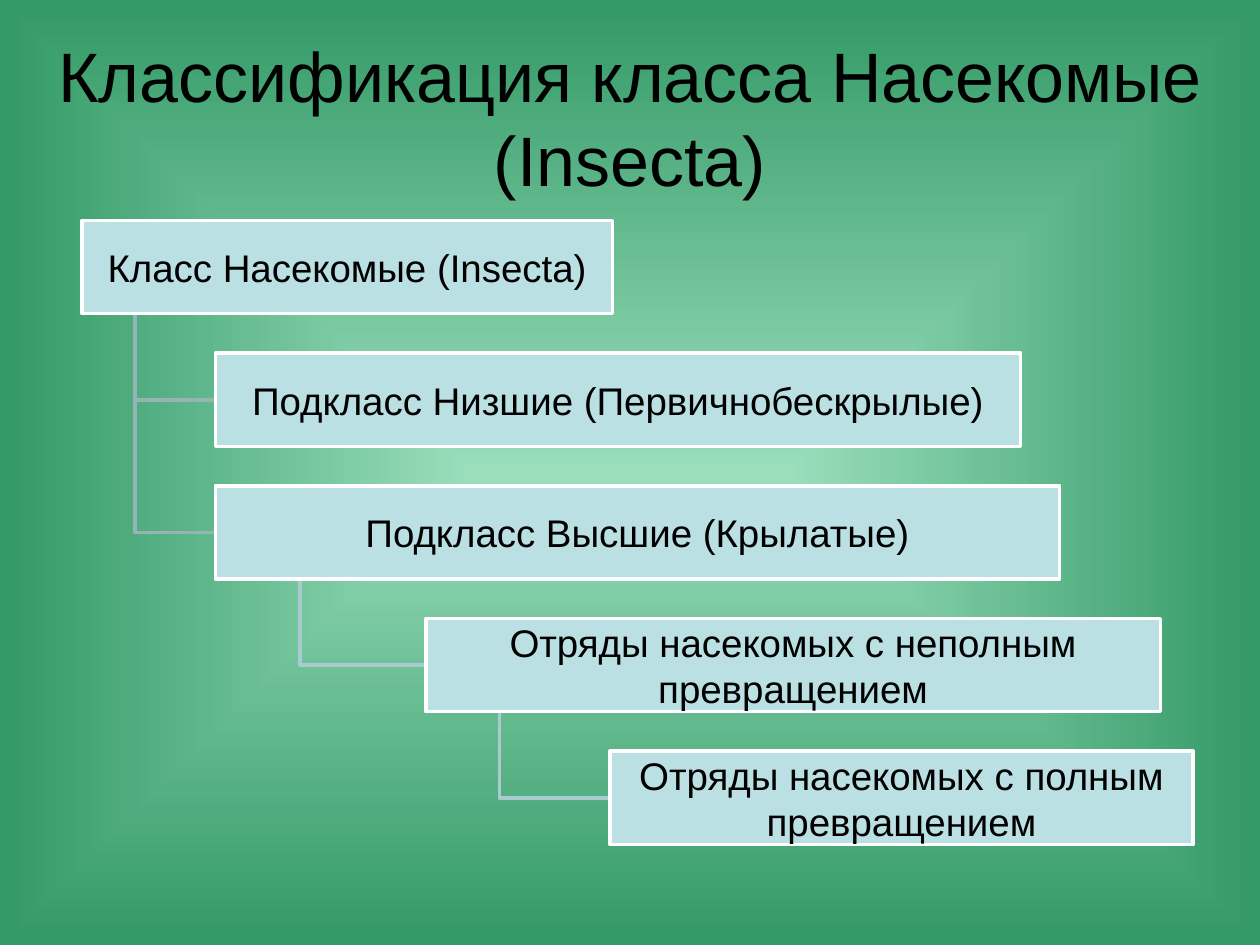
"""Build a slide with the classification tree of the class Insecta."""
from lxml import etree
from pptx import Presentation
from pptx.dml.color import RGBColor
from pptx.enum.text import MSO_ANCHOR, MSO_AUTO_SIZE, PP_ALIGN
from pptx.oxml.ns import qn
from pptx.util import Inches, Pt

COLORS = {
    "center": "9ADEBC",
    "edge": "339966",
    "text": "000000",
    "box": "BBE0E3",
    "border": "FFFFFF",
    "upper_branch": "96B3B6",
    "lower_branch": "AACBCE",
}
FIRST_ROW, ROW_STEP, BOX_HEIGHT = 1.75, 1.053, 0.74
TRUNK_SHARE = 0.1

GROUPS = [
    ("Класс Насекомые (Insecta)", 0.65, 4.21),
    ("Подкласс Низшие (Первичнобескрылые)", 1.71, 6.39),
    ("Подкласс Высшие (Крылатые)", 1.71, 6.7),
    ("Отряды насекомых с неполным\nпревращением", 3.38, 5.83),
    ("Отряды насекомых с полным\nпревращением", 4.84, 4.63),
]
BRANCHES = [
    (3, 4, "lower_branch"),
    (2, 3, "lower_branch"),
    (0, 2, "upper_branch"),
    (0, 1, "upper_branch"),
]


def rgb(name):
    return RGBColor.from_string(COLORS[name])


def write(frame, text, size):
    frame.text = text
    frame.word_wrap = True
    frame.auto_size = MSO_AUTO_SIZE.NONE
    frame.vertical_anchor = MSO_ANCHOR.MIDDLE
    for paragraph in frame.paragraphs:
        paragraph.alignment = PP_ALIGN.CENTER
        paragraph.font.name = "Arial"
        paragraph.font.size = Pt(size)
        paragraph.font.color.rgb = rgb("text")


presentation = Presentation()
presentation.slide_width = Inches(10)
presentation.slide_height = Inches(7.5)
slide = presentation.slides.add_slide(presentation.slide_layouts[5])

backdrop = slide.background.fill
backdrop.gradient()
for stop, name, position in zip(backdrop.gradient_stops, ("center", "edge"), (0, 1)):
    stop.color.rgb = rgb(name)
    stop.position = position
gradient = next(slide.element.iter(qn("a:gradFill")))
gradient.remove(gradient.find(qn("a:lin")))
spread = etree.SubElement(gradient, qn("a:path"), {"path": "shape"})
etree.SubElement(spread, qn("a:fillToRect"), {side: "50000" for side in "ltrb"})

title = slide.shapes.title
title.left, title.top = 0, Inches(0.3)
title.width, title.height = presentation.slide_width, Inches(1.25)
write(title.text_frame, "Классификация класса Насекомые (Insecta)", 40)

row_tops = [FIRST_ROW + ROW_STEP * row for row in range(len(GROUPS))]

for parent, child, color in BRANCHES:
    _, parent_left, parent_width = GROUPS[parent]
    trunk = Inches(parent_left + TRUNK_SHARE * parent_width)
    start = Inches(row_tops[parent] + BOX_HEIGHT)
    middle = Inches(row_tops[child] + BOX_HEIGHT / 2)
    outline = slide.shapes.build_freeform(trunk, start)
    outline.add_line_segments([(trunk, middle), (Inches(GROUPS[child][1]), middle)], close=False)
    branch = outline.convert_to_shape()
    branch.shadow.inherit = False
    branch.fill.background()
    branch.line.color.rgb = rgb(color)
    branch.line.width = Pt(2)

for (label, left, width), top in zip(GROUPS, row_tops):
    box = slide.shapes.add_shape(1, Inches(left), Inches(top), Inches(width), Inches(BOX_HEIGHT))
    box.shadow.inherit = False
    box.fill.solid()
    box.fill.fore_color.rgb = rgb("box")
    box.line.color.rgb = rgb("border")
    box.line.width = Pt(2)
    frame = box.text_frame
    frame.margin_left = frame.margin_right = Inches(0.02)
    frame.margin_top = frame.margin_bottom = Inches(0.02)
    write(frame, label, 22)

presentation.save("out.pptx")
